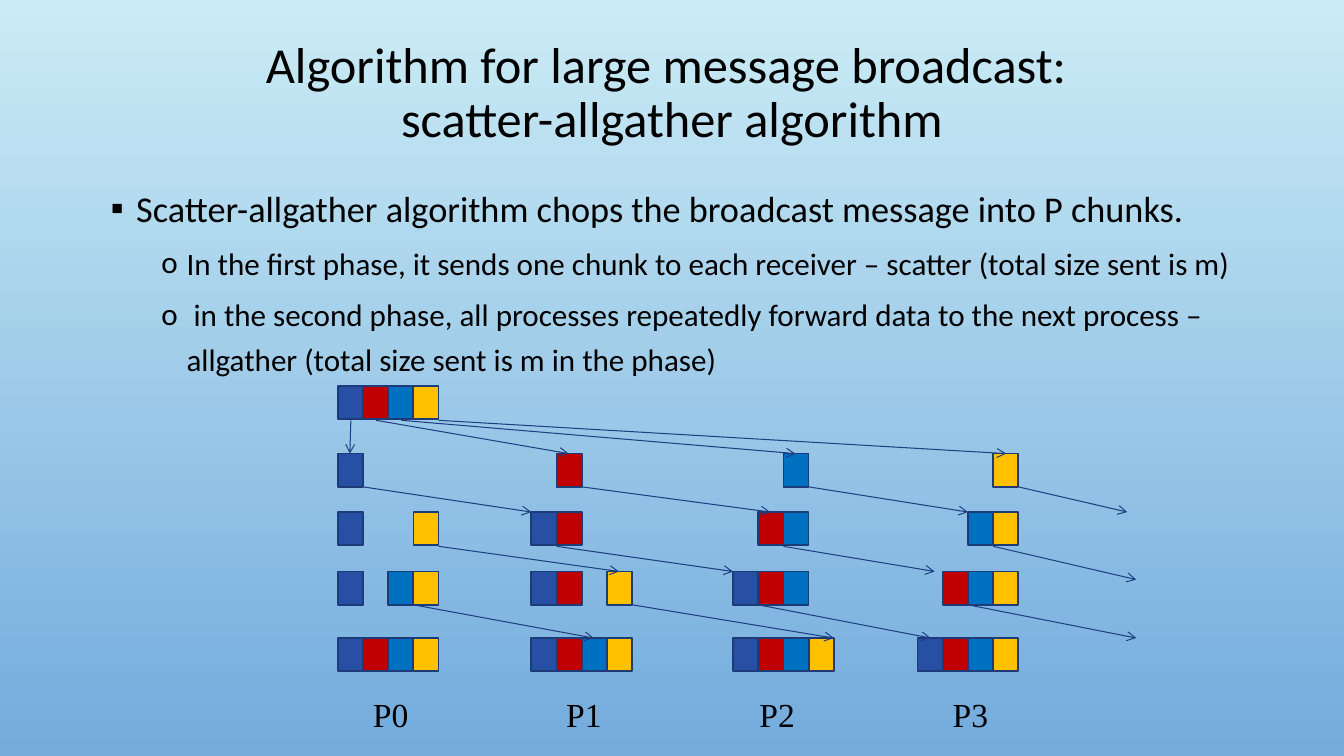
import pptx
import pptx.util
from lxml import etree
from pptx.dml.color import RGBColor
from pptx.enum.shapes import MSO_CONNECTOR, MSO_SHAPE
from pptx.enum.text import MSO_ANCHOR, MSO_AUTO_SIZE, PP_ALIGN
from pptx.oxml.ns import qn
from pptx.util import Inches

COLORS = {
    "sky_top": "CBECF5",
    "sky_bottom": "73ABDD",
    "text": "000000",
    "outline": "1D3A79",
    "arrow": "1F3F83",
}
CHUNK_COLORS = ["274FA4", "C00000", "0070C0", "FFC000"]

CHUNK_WIDTH, CHUNK_HEIGHT = 0.25, 0.33
PROCESS_LEFTS = [3.35, 5.27, 7.27, 9.1]
MESSAGE_TOP = 3.83
STEP_TOPS = [4.5, 5.08, 5.67, 6.33]

# Start and end x of each arrow, by the gap between rows that it crosses
ARROW_GAPS = [
    (4.17, 4.5, [(3.48, 3.47), (3.73, 5.64), (3.98, 7.89), (4.35, 9.98)]),
    (4.83, 5.08, [(3.6, 5.27), (5.77, 7.64), (8.02, 9.6), (10.1, 11.18)]),
    (5.42, 5.67, [(4.35, 6.14), (5.52, 7.27), (7.77, 9.27)]),
    (5.42, 5.75, [(9.85, 11.27)]),
    (6, 6.33, [(4.1, 5.89), (6.27, 8.27), (7.52, 9.23), (9.6, 11.27)]),
]

TITLE = "Algorithm for large message broadcast: \vscatter-allgather algorithm"
# Text, level, bullet, size, space before
BODY = [
    ("Scatter-allgather algorithm chops the broadcast message into P chunks.",
     0, "▪", 25.9, 0),
    ("In the first phase, it sends one chunk to each receiver – scatter "
     "(total size sent is m)", 1, "o", 22.2, 5),
    (" in the second phase, all processes repeatedly forward data to the next "
     "process – allgather (total size sent is m in the phase)",
     1, "o", 22.2, 5),
]


def rgb(name):
    return RGBColor.from_string(COLORS[name])


def set_font(paragraph, name, size):
    paragraph.font.name = name
    paragraph.font.size = pptx.util.Pt(size)
    paragraph.font.color.rgb = rgb("text")


def place(shape, left, top, width, height):
    shape.left, shape.top = Inches(left), Inches(top)
    shape.width, shape.height = Inches(width), Inches(height)


def set_bullet(paragraph, character, indent):
    properties = paragraph._p.get_or_add_pPr()
    properties.set("marL", str(Inches(indent)))
    properties.set("indent", str(Inches(-0.25)))
    color = etree.SubElement(properties, qn("a:buClr"))
    etree.SubElement(color, qn("a:srgbClr"), val=COLORS["text"])
    etree.SubElement(properties, qn("a:buFont"), typeface="Calibri")
    etree.SubElement(properties, qn("a:buChar"), char=character)


def paint_background(slide):
    fill = slide.background.fill
    fill.gradient()
    fill.gradient_angle = 270
    for stop, name in zip(fill.gradient_stops, ("sky_top", "sky_bottom")):
        stop.color.rgb = rgb(name)


def fill_title(title):
    place(title, 1, 0.32, 11.33, 1.23)
    frame = title.text_frame
    frame.text = TITLE
    frame.auto_size = MSO_AUTO_SIZE.NONE
    frame.vertical_anchor = MSO_ANCHOR.MIDDLE
    paragraph = frame.paragraphs[0]
    paragraph.alignment = PP_ALIGN.CENTER
    paragraph.line_spacing = 0.9
    set_font(paragraph, "Calibri", 36)


def fill_body(body):
    place(body, 1, 1.71, 11.33, 2.69)
    frame = body.text_frame
    frame.text = "\n".join(item[0] for item in BODY)
    frame.auto_size = MSO_AUTO_SIZE.NONE
    for paragraph, item in zip(frame.paragraphs, BODY):
        _, level, bullet, size, space = item
        set_bullet(paragraph, bullet, 0.25 + 0.5 * level)
        paragraph.level = level
        paragraph.line_spacing = 1.2
        paragraph.space_before = pptx.util.Pt(space)
        set_font(paragraph, "Calibri", size)


def add_chunk(slide, process, chunk, top):
    left = PROCESS_LEFTS[process] + chunk * CHUNK_WIDTH
    shape = slide.shapes.add_shape(
        MSO_SHAPE.RECTANGLE, Inches(left), Inches(top),
        Inches(CHUNK_WIDTH), Inches(CHUNK_HEIGHT))
    shape.shadow.inherit = False
    shape.fill.solid()
    shape.fill.fore_color.rgb = RGBColor.from_string(CHUNK_COLORS[chunk])
    shape.line.color.rgb = rgb("outline")
    shape.line.width = pptx.util.Pt(1.25)


def add_arrow(slide, start_x, start_y, end_x, end_y):
    arrow = slide.shapes.add_connector(
        MSO_CONNECTOR.STRAIGHT, Inches(start_x), Inches(start_y),
        Inches(end_x), Inches(end_y))
    arrow.line.color.rgb = rgb("arrow")
    arrow.line.width = pptx.util.Pt(0.75)
    etree.SubElement(arrow.line._get_or_add_ln(), qn("a:tailEnd"), type="arrow")
    etree.SubElement(arrow._element.spPr, qn("a:effectLst"))


def add_process_label(slide, process):
    label = slide.shapes.add_textbox(
        Inches(3.6 + 1.917 * process), Inches(6.83), Inches(0.56), Inches(0.51))
    frame = label.text_frame
    frame.text = f"P{process}"
    frame.word_wrap = False
    frame.auto_size = MSO_AUTO_SIZE.SHAPE_TO_FIT_TEXT
    set_font(frame.paragraphs[0], "Times New Roman", 24)


def main():
    presentation = pptx.Presentation()
    presentation.slide_width = Inches(13.33)
    presentation.slide_height = Inches(7.5)
    slide = presentation.slides.add_slide(presentation.slide_layouts[1])

    paint_background(slide)
    fill_title(slide.shapes.title)
    fill_body(slide.placeholders[1])

    # Whole message at the root
    for chunk in range(4):
        add_chunk(slide, 0, chunk, MESSAGE_TOP)

    # Each step adds the chunk passed on by the previous process
    for step, top in enumerate(STEP_TOPS):
        for process in range(4):
            held = {(process - passed) % 4 for passed in range(step + 1)}
            for chunk in sorted(held):
                add_chunk(slide, process, chunk, top)

    # Messages between rows
    for start_y, end_y, spans in ARROW_GAPS:
        for start_x, end_x in spans:
            add_arrow(slide, start_x, start_y, end_x, end_y)

    for process in range(4):
        add_process_label(slide, process)

    presentation.save("out.pptx")


if __name__ == "__main__":
    main()
